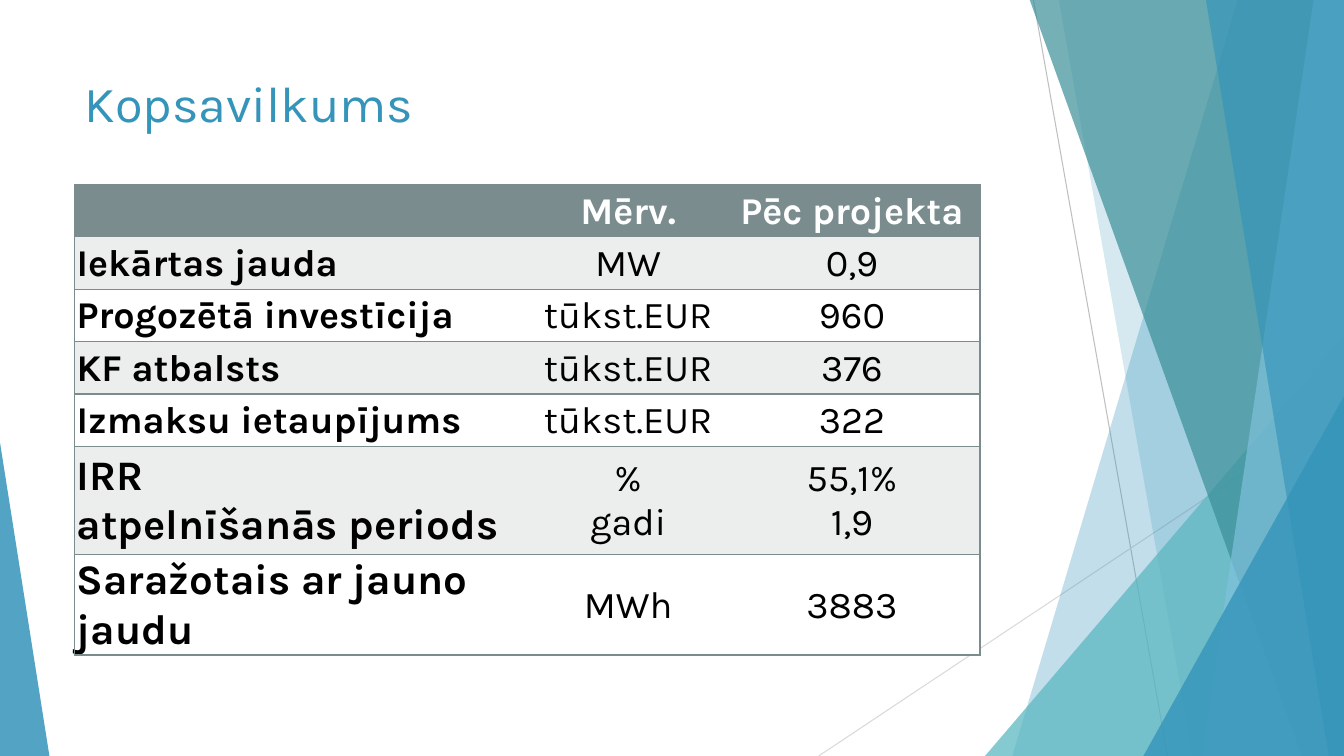
from lxml import etree
from pptx import Presentation
from pptx.dml.color import RGBColor
from pptx.enum.shapes import MSO_CONNECTOR, MSO_SHAPE
from pptx.enum.text import MSO_ANCHOR, PP_ALIGN
from pptx.oxml.ns import qn
from pptx.util import Inches, Pt

FONT = "Karla"
BLUE = RGBColor(0x34, 0x94, 0xBA)
LIGHT_BLUE = RGBColor(0x7F, 0xC1, 0xDB)
TEAL = RGBColor(0x58, 0xB6, 0xC0)
DARK_TEAL = RGBColor(0x3A, 0x8F, 0x98)
SLATE = RGBColor(0x7A, 0x8C, 0x8E)
BAND = RGBColor(0xEC, 0xEE, 0xEE)
WHITE = RGBColor(0xFF, 0xFF, 0xFF)
BLACK = RGBColor(0, 0, 0)
GREY = RGBColor(0xBF, 0xBF, 0xBF)
LIGHT_GREY = RGBColor(0xD9, 0xD9, 0xD9)

NO_STYLE = "{2D5ABB26-0587-4C30-8999-92F81FD0307C}"
RIGHT, TOP, BOTTOM = 13.33, -0.01, 7.5

# Top-left x, bottom-left x, colour, opacity in percent
BACK_PANELS = [(12.28, 10.04, BLUE, 30), (10.5, 11.83, BLUE, 20)]
FRONT_PANELS = [
    (10.21, 12.91, DARK_TEAL, 70),
    (13.03, 11.92, LIGHT_BLUE, 70),
    (11.96, 13.18, BLUE, 65),
]

COLUMN_WIDTHS = [4.54, 1.9, 2.54]
ROW_HEIGHTS = [0.52] * 5 + [1.07, 1.0]
ROWS = [
    ("", "Mērv.", "Pēc projekta"),
    ("Iekārtas jauda", "MW", "0,9"),
    ("Progozētā investīcija", "tūkst.EUR", "960"),
    ("KF atbalsts", "tūkst.EUR", "376"),
    ("Izmaksu ietaupījums", "tūkst.EUR", "322"),
    ("IRR\natpelnīšanās periods", "%\ngadi", "55,1%\n1,9"),
    ("Saražotais ar jauno jaudu", "MWh", "3883"),
]


def set_attrs(obj, values):
    for name, value in values.items():
        setattr(obj, name, value)


def style_font(font, size, color, bold=False):
    set_attrs(font, {"name": FONT, "size": Pt(size), "bold": bold})
    font.color.rgb = color


def style_shape(shape, color, opacity):
    shape.shadow.inherit = False
    shape.fill.solid()
    shape.fill.fore_color.rgb = color
    shape.line.fill.background()
    clr = shape._element.spPr.find(".//" + qn("a:srgbClr"))
    etree.SubElement(clr, qn("a:alpha"), val=str(opacity * 1000))


def add_line(s, start, end, color):
    ends = [Inches(v) for v in start + end]
    line = s.shapes.add_connector(MSO_CONNECTOR.STRAIGHT, *ends)
    line.line.color.rgb = color
    line.line.width = Pt(0.75)
    etree.SubElement(line._element.spPr, qn("a:effectLst"))


def add_panel(s, top_x, bottom_x, color, opacity):
    """Panel with a slanted left side that runs to the right slide edge."""
    points = [(RIGHT, TOP), (RIGHT, BOTTOM), (bottom_x, BOTTOM)]
    builder = s.shapes.build_freeform(Inches(top_x), Inches(TOP))
    builder.add_line_segments([(Inches(x), Inches(y)) for x, y in points])
    style_shape(builder.convert_to_shape(), color, opacity)


def add_triangle(s, left, top, width, apex, color, opacity):
    box = [Inches(v) for v in (left, top, width, BOTTOM - top)]
    shape = s.shapes.add_shape(MSO_SHAPE.ISOSCELES_TRIANGLE, *box)
    shape.adjustments[0] = apex
    style_shape(shape, color, opacity)


def add_decoration(s):
    add_line(s, (10.25, 0), (11.58, 7.5), GREY)
    add_line(s, (13.33, 4.03), (8.12, 7.5), LIGHT_GREY)
    for panel in BACK_PANELS:
        add_panel(s, *panel)
    add_triangle(s, 9.77, 3.33, 3.56, 1, TEAL, 72)
    for panel in FRONT_PANELS:
        add_panel(s, *panel)
    add_triangle(s, 11.34, 3.93, 1.99, 1, BLUE, 80)
    add_triangle(s, 0, 4.39, 0.49, 0, BLUE, 85)


def add_title(s, text):
    title = s.shapes.title
    set_attrs(title, {"left": Inches(0.74), "top": Inches(0.67),
                      "width": Inches(9.4), "height": Inches(1.44)})
    tf = title.text_frame
    tf.text = text
    tf.vertical_anchor = MSO_ANCHOR.TOP
    p = tf.paragraphs[0]
    p.alignment = PP_ALIGN.LEFT
    style_font(p.runs[0].font, 36, BLUE)
    # Bring the title in front of the decoration
    s.shapes._spTree.append(title._element)


def add_borders(cell, sides):
    tcPr = cell._tc.get_or_add_tcPr()
    for side in sides:
        ln = etree.SubElement(tcPr, qn("a:ln" + side), w=str(Pt(1)))
        fill = etree.SubElement(ln, qn("a:solidFill"))
        etree.SubElement(fill, qn("a:srgbClr"), val=str(SLATE))


def fill_cell(cell, text, row, col):
    set_attrs(cell, {"margin_left": Inches(0.02), "margin_right": Inches(0.02),
                     "margin_top": Inches(0.02), "margin_bottom": 0,
                     "vertical_anchor": MSO_ANCHOR.MIDDLE})
    add_borders(cell, ("LTB", "TB", "RTB")[col])
    cell.fill.solid()
    cell.fill.fore_color.rgb = SLATE if row == 0 else BAND if row % 2 else WHITE
    cell.text = text
    size = 30 if col == 0 and row >= 5 else 27
    for p in cell.text_frame.paragraphs:
        p.alignment = PP_ALIGN.CENTER if col else PP_ALIGN.LEFT
        for r in p.runs:
            style_font(r.font, size, BLACK if row else WHITE, row == 0 or col == 0)


def add_summary_table(s):
    box = (0.74, 1.83, sum(COLUMN_WIDTHS), sum(ROW_HEIGHTS))
    frame = s.shapes.add_table(len(ROWS), len(COLUMN_WIDTHS),
                               *[Inches(v) for v in box])
    table = frame.table
    table._tbl.tblPr.find(qn("a:tableStyleId")).text = NO_STYLE
    for column, width in zip(table.columns, COLUMN_WIDTHS):
        column.width = Inches(width)
    for i, (values, height) in enumerate(zip(ROWS, ROW_HEIGHTS)):
        table.rows[i].height = Inches(height)
        for j, text in enumerate(values):
            fill_cell(table.cell(i, j), text, i, j)


def main():
    prs = Presentation()
    prs.slide_width, prs.slide_height = Inches(13.33), Inches(7.5)
    s = prs.slides.add_slide(prs.slide_layouts[5])
    add_decoration(s)
    add_title(s, "Kopsavilkums")
    add_summary_table(s)
    prs.save("out.pptx")


if __name__ == "__main__":
    main()
